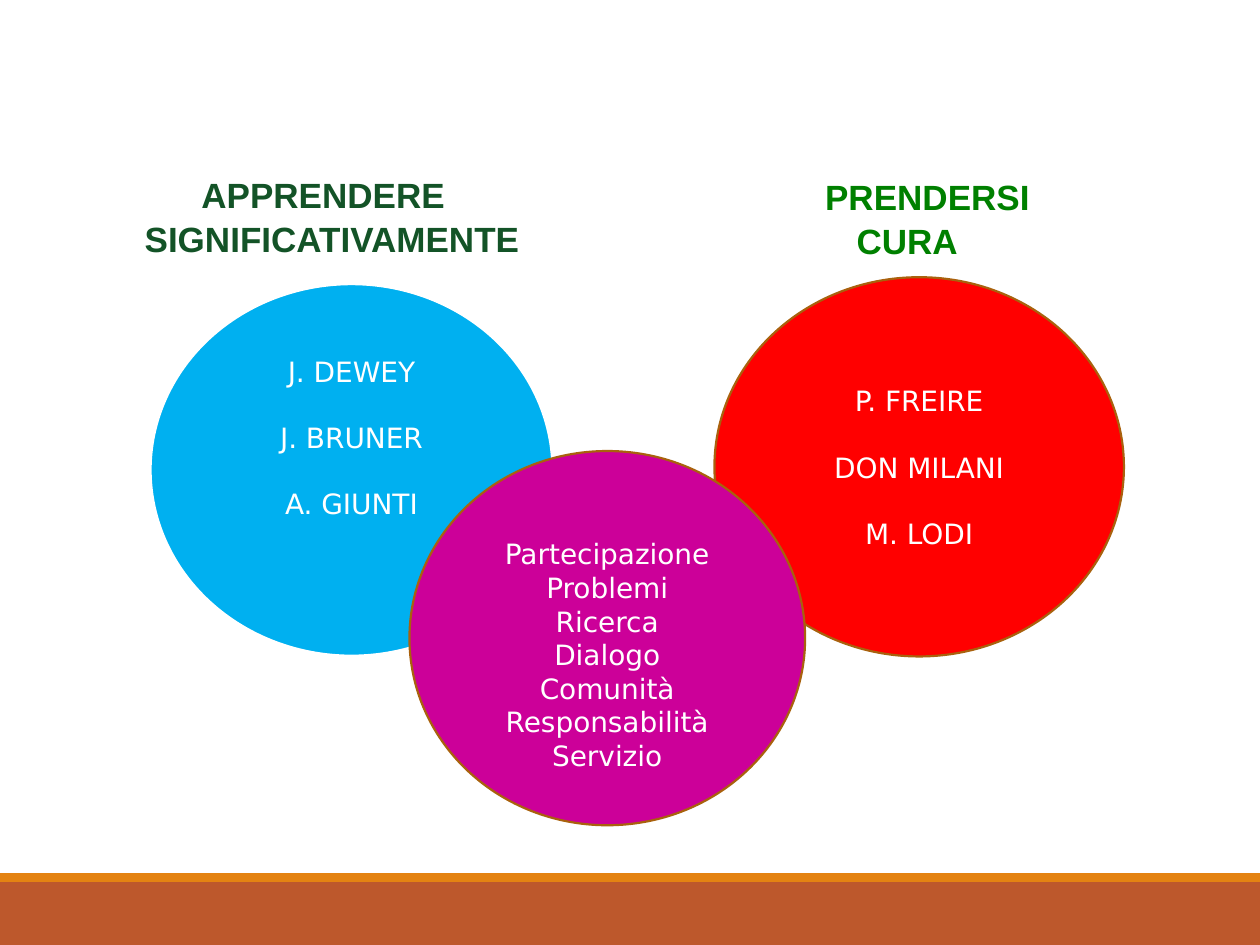
from dataclasses import dataclass

from pptx import Presentation
from pptx.dml.color import RGBColor
from pptx.enum.shapes import MSO_SHAPE
from pptx.enum.text import MSO_ANCHOR, PP_ALIGN
from pptx.util import Inches, Pt

RECTANGLE, OVAL = MSO_SHAPE.RECTANGLE, MSO_SHAPE.OVAL
MIDDLE, CENTER = MSO_ANCHOR.MIDDLE, PP_ALIGN.CENTER


@dataclass(frozen=True)
class Theme:
    heading_font: str = "Arial"
    body_font: str = "DejaVu Sans"
    heading_size: int = 20
    body_size: int = 16
    body_line: float = 18.6
    white: str = "FFFFFF"
    brown: str = "A9610D"
    blue: str = "00B0F0"
    red: str = "FF0000"
    magenta: str = "CC0099"
    dark_green: str = "135327"
    green: str = "008000"
    footer: str = "BD582C"
    footer_edge: str = "E48312"


THEME = Theme()


def add_filled_shape(kind, box, fill):
    shape = slide.shapes.add_shape(kind, *map(Inches, box))
    shape.shadow.inherit = False
    shape.fill.solid()
    shape.fill.fore_color.rgb = RGBColor.from_string(fill)
    shape.line.fill.background()
    return shape


presentation = Presentation()
presentation.slide_width = Inches(10)
presentation.slide_height = Inches(7.5)
slide = presentation.slides.add_slide(presentation.slide_layouts[6])

add_filled_shape(RECTANGLE, (0, 7, 10, 0.5), THEME.footer)
add_filled_shape(RECTANGLE, (0, 6.93, 10, 0.07), THEME.footer_edge)

# Box, fill, outline, outline width, gap between lines, top and bottom inset, lines
circles = [
    ((1.19, 2.25, 3.2, 2.96), THEME.blue, THEME.white, 2, THEME.body_line, 0.05, 0.57,
     ["J. DEWEY", "J. BRUNER", "A. GIUNTI"]),
    ((5.67, 2.2, 3.25, 3.01), THEME.red, THEME.brown, 1.25, THEME.body_line, 0.05, 0.05,
     ["P. FREIRE", "DON MILANI", "M. LODI"]),
    ((3.25, 3.58, 3.14, 2.97), THEME.magenta, THEME.brown, 1.25, 0, 0.31, 0.05,
     ["Partecipazione Problemi", "Ricerca", "Dialogo", "Comunità",
      "Responsabilità", "Servizio"]),
]
for box, fill, outline, width, gap, top, bottom, lines in circles:
    circle = add_filled_shape(OVAL, box, fill)
    circle.line.color.rgb = RGBColor.from_string(outline)
    circle.line.width = Pt(width)
    frame = circle.text_frame
    frame.word_wrap = True
    frame.vertical_anchor = MIDDLE
    frame.margin_top, frame.margin_bottom = Inches(top), Inches(bottom)
    frame.text = "\n".join(lines)
    for index, paragraph in enumerate(frame.paragraphs):
        paragraph.alignment = CENTER
        paragraph.space_before = Pt(gap if index else 0)
        paragraph.font.name = THEME.body_font
        paragraph.font.size = Pt(THEME.body_size)
        paragraph.font.color.rgb = RGBColor.from_string(THEME.white)

# Box, first-line indent, colour, text
headings = [
    ((0.24, 1.31, 4.74, 0.77), 0.45, THEME.dark_green, "APPRENDERE SIGNIFICATIVAMENTE"),
    ((5.89, 1.33, 2.99, 0.77), -0.25, THEME.green, "PRENDERSI CURA"),
]
for box, indent, color, text in headings:
    frame = slide.shapes.add_textbox(*map(Inches, box)).text_frame
    frame.word_wrap = True
    paragraph = frame.paragraphs[0]
    paragraph.text = text
    paragraph.line_spacing = 1.05
    properties = paragraph._p.get_or_add_pPr()
    properties.set("marL", str(Inches(0.81)))
    properties.set("indent", str(Inches(indent)))
    paragraph.font.name = THEME.heading_font
    paragraph.font.size = Pt(THEME.heading_size)
    paragraph.font.bold = True
    paragraph.font.color.rgb = RGBColor.from_string(color)

presentation.save("out.pptx")
